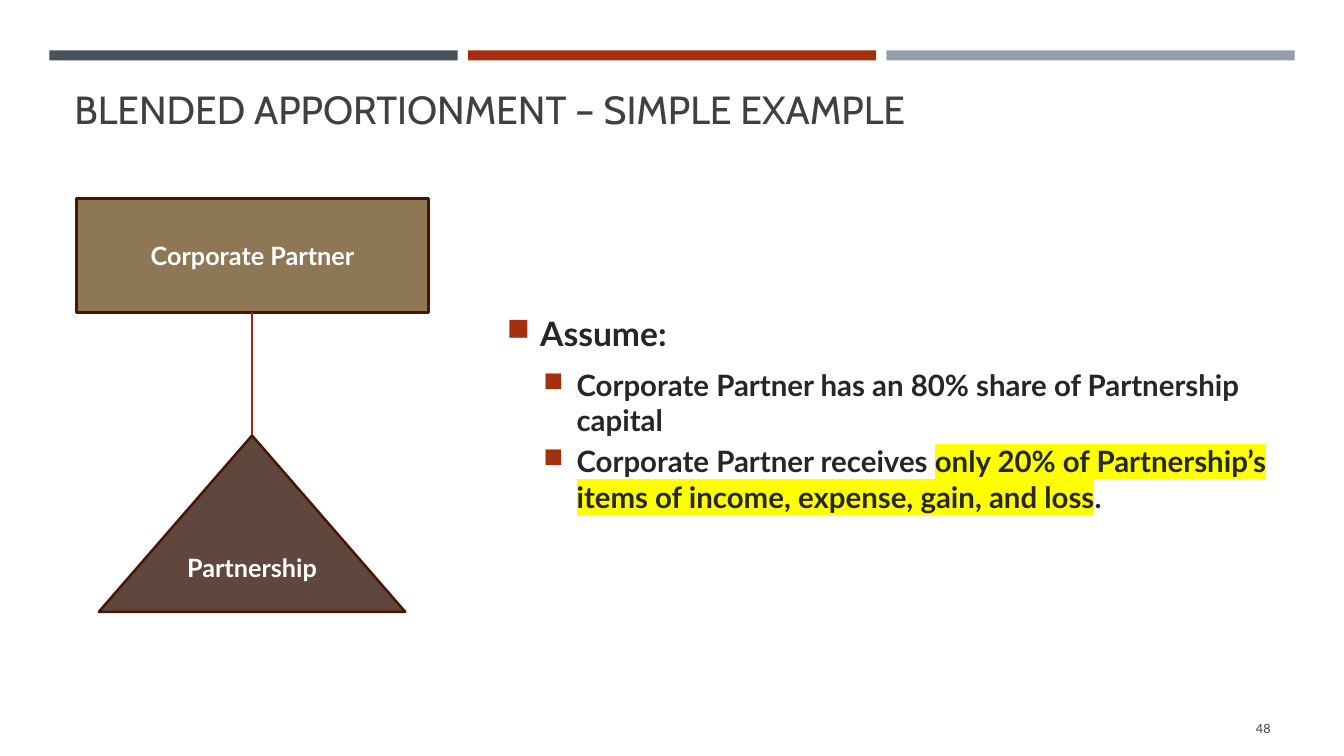
from lxml import etree
from pptx import Presentation
from pptx.dml.color import RGBColor
from pptx.enum.shapes import MSO_CONNECTOR, MSO_SHAPE
from pptx.enum.text import MSO_ANCHOR, PP_ALIGN
from pptx.oxml.ns import qn
from pptx.util import Inches, Pt

RECT, TRIANGLE = MSO_SHAPE.RECTANGLE, MSO_SHAPE.ISOSCELES_TRIANGLE
STRAIGHT = MSO_CONNECTOR.STRAIGHT
MIDDLE, BOTTOM = MSO_ANCHOR.MIDDLE, MSO_ANCHOR.BOTTOM
LEFT, CENTER, RIGHT = PP_ALIGN.LEFT, PP_ALIGN.CENTER, PP_ALIGN.RIGHT

COLORS = {
    "slate": "465359", "rust": "A5300F", "gray": "969FA7",
    "title": "404040", "body": "262626", "white": "FFFFFF",
    "brown": "5F473E", "tan": "8E7755", "edge": "481507",
    "link": "942B0E", "mark": "FFFF00",
}


def color(name):
    return RGBColor.from_string(COLORS[name])


def add_tag(parent, tag, **attrs):
    return etree.SubElement(parent, qn(tag), attrs)


def add_text(para, text, size=18, font="Lato", ink="body", bold=False,
             align=LEFT, mark=None):
    para.alignment = align
    run = para.add_run()
    run.text = text
    run.font.size = Pt(size)
    run.font.name = font
    run.font.bold = bold
    run.font.color.rgb = color(ink)
    if mark:
        props = run.font._element
        light = add_tag(props, "a:highlight")
        add_tag(light, "a:srgbClr", val=COLORS[mark])
        props.find(qn("a:solidFill")).addnext(light)


def add_box(slide, place, anchor=MIDDLE):
    frame = slide.shapes.add_textbox(*map(Inches, place)).text_frame
    frame.word_wrap = True
    frame.vertical_anchor = anchor
    return frame


def add_shape(slide, kind, place, fill, edge=None, text=None):
    shape = slide.shapes.add_shape(kind, *map(Inches, place))
    shape.shadow.inherit = False
    shape.fill.solid()
    shape.fill.fore_color.rgb = color(fill)
    if edge:
        shape.line.color.rgb = color(edge)
        shape.line.width = Pt(1.75)
    else:
        shape.line.fill.background()
    if text:
        shape.text_frame.vertical_anchor = MIDDLE
        add_text(shape.text_frame.paragraphs[0], text, ink="white",
                 bold=True, align=CENTER)


def add_link(slide, start, end):
    link = slide.shapes.add_connector(STRAIGHT, *map(Inches, start + end))
    link.line.color.rgb = color("link")
    link.line.width = Pt(1)
    add_tag(link._element.spPr, "a:effectLst")


def add_bullet(para, runs, level, size, indent, after=0, spacing=1):
    para.level = level
    para.line_spacing = spacing
    para.space_before = Pt(0.2 * size)
    para.space_after = Pt(after)
    props = para._p.get_or_add_pPr()
    props.set("marL", str(Inches(indent)))
    props.set("indent", str(Inches(-0.33)))
    tint = add_tag(props, "a:buClr")
    add_tag(tint, "a:srgbClr", val=COLORS["rust"])
    add_tag(props, "a:buSzPct", val="92000")
    add_tag(props, "a:buChar", char="■")
    for text, mark in runs:
        add_text(para, text, size=size, bold=True, mark=mark)


def add_chart(slide):
    add_shape(slide, TRIANGLE, (0.98, 4.32, 3.04, 1.75), "brown", "edge",
              "Partnership")
    add_shape(slide, RECT, (0.76, 1.97, 3.49, 1.13), "tan", "edge",
              "Corporate Partner")
    add_link(slide, (2.5, 3.1), (2.5, 4.32))


def add_body(slide):
    frame = add_box(slide, (4.93, 1.62, 7.77, 4.92))
    add_bullet(frame.paragraphs[0], [("Assume:", None)], 0, 24, 0.33,
               after=6, spacing=1.1)
    points = [
        [("Corporate Partner has an 80% share of Partnership capital", None)],
        [("Corporate Partner receives ", None),
         ("only 20% of Partnership’s items of income, expense, gain, and loss",
          "mark"),
         (".", None)],
    ]
    for runs in points:
        add_bullet(frame.add_paragraph(), runs, 1, 21, 0.69)


def main():
    deck = Presentation()
    deck.slide_width, deck.slide_height = Inches(13.33), Inches(7.5)
    slide = deck.slides.add_slide(deck.slide_layouts[6])
    for index, fill in enumerate(("slate", "rust", "gray")):
        add_shape(slide, RECT, (0.49 + 4.15 * index, 0.5, 4.05, 0.1), fill)
    title = add_box(slide, (0.64, 0.77, 12.06, 0.59), BOTTOM)
    add_text(title.paragraphs[0], "BLENDED APPORTIONMENT – SIMPLE EXAMPLE",
             size=28, font="Cabin", ink="title")
    add_body(slide)
    number = add_box(slide, (11.55, 7.03, 1.15, 0.4))
    add_text(number.paragraphs[0], "48", size=9, ink="title", align=RIGHT)
    add_chart(slide)
    deck.save("out.pptx")


if __name__ == "__main__":
    main()
